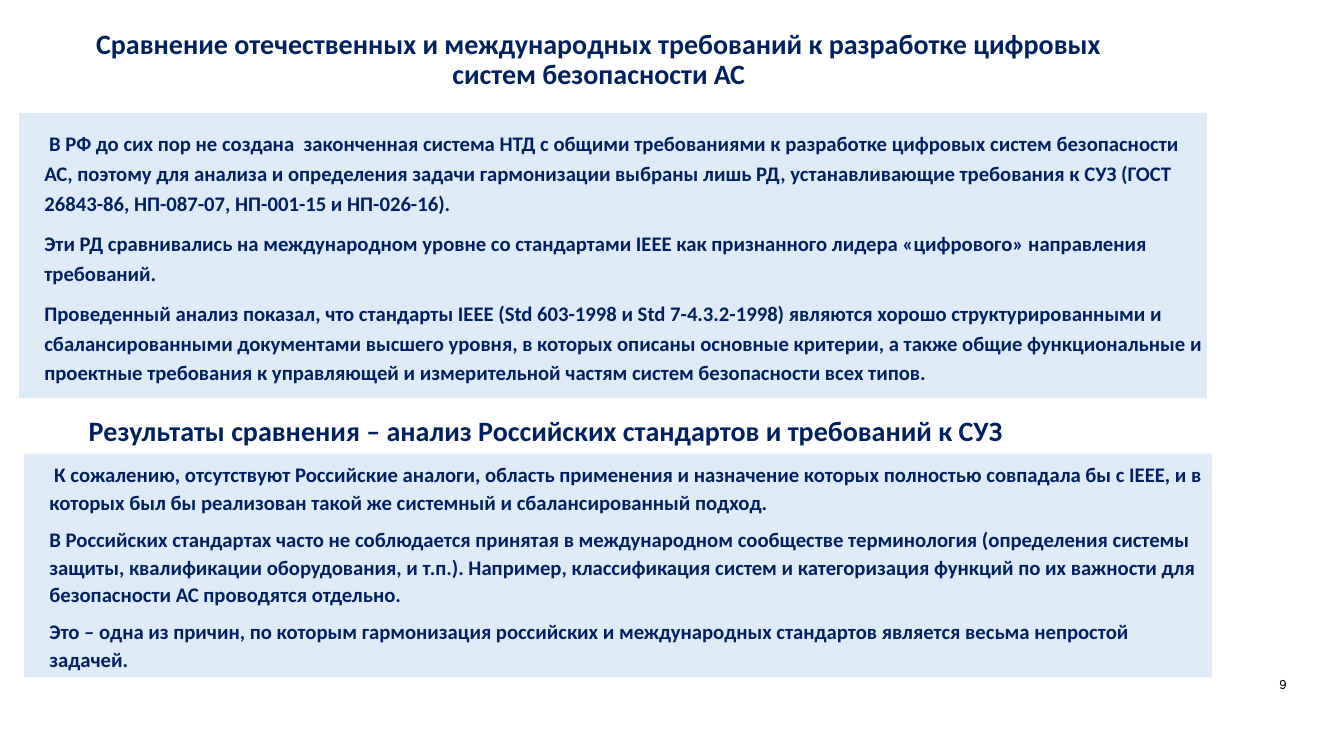
import dataclasses

import pptx
import pptx.dml.color
import pptx.enum.shapes
import pptx.enum.text
import pptx.util

ALIGN = pptx.enum.text.PP_ALIGN
ANCHOR = pptx.enum.text.MSO_ANCHOR
WIDTH, HEIGHT = 13.33, 7.5


@dataclasses.dataclass(frozen=True)
class Theme:
    ink: str = "002060"
    panel: str = "DEEBF7"
    number_ink: str = "000000"
    font: str = "Calibri"
    number_font: str = "Arial"
    heading_size: float = 20
    body_size: float = 14.8
    number_size: float = 9.3
    body_gap: float = 7.3
    body_indent: float = 0.25


THEME = Theme()

TITLE = "Сравнение отечественных и международных требований к разработке цифровых систем безопасности АС"
RESULTS_TITLE = "Результаты сравнения – анализ Российских стандартов и требований к СУЗ"
REQUIREMENTS = [
    " В РФ до сих пор не создана  законченная система НТД с общими требованиями к разработке "
    "цифровых систем безопасности АС, поэтому для анализа и определения задачи гармонизации "
    "выбраны лишь РД, устанавливающие требования к СУЗ "
    "(ГОСТ 26843-86, НП-087-07, НП-001-15 и НП-026-16).",
    "Эти РД сравнивались на международном уровне со стандартами IEEE как признанного лидера "
    "«цифрового» направления требований.",
    "Проведенный анализ показал, что стандарты IEEE (Std 603-1998 и Std 7-4.3.2-1998) являются "
    "хорошо структурированными и сбалансированными документами высшего уровня, в которых описаны "
    "основные критерии, а также общие функциональные и проектные требования к управляющей и "
    "измерительной частям систем безопасности всех типов.",
]
RESULTS = [
    " К сожалению, отсутствуют Российские аналоги, область применения и назначение которых "
    "полностью совпадала бы с IEEE, и в которых был бы реализован такой же системный и "
    "сбалансированный подход.",
    "В Российских стандартах часто не соблюдается принятая в международном сообществе "
    "терминология (определения системы защиты, квалификации оборудования, и т.п.). Например, "
    "классификация систем и категоризация функций по их важности для безопасности АС "
    "проводятся отдельно.",
    "Это – одна из причин, по которым гармонизация российских и международных стандартов "
    "является весьма непростой задачей.",
]


def color(value):
    return pptx.dml.color.RGBColor.from_string(value)


def apply(target, formats):
    for name, value in formats.items():
        setattr(target, name, value)


def place(area):
    return [pptx.util.Inches(length) for length in area]


def write(box, texts, font, ink, anchor=ANCHOR.TOP, **para_formats):
    """Fill a box with paragraphs that share one format."""
    frame = box.text_frame
    apply(frame, {"word_wrap": True, "vertical_anchor": anchor, "margin_left": 0,
                  "margin_top": 0, "margin_right": 0, "margin_bottom": 0})
    for index, text in enumerate(texts):
        para = frame.paragraphs[0] if index == 0 else frame.add_paragraph()
        apply(para, para_formats)
        if index == 0:
            para.space_before = pptx.util.Pt(0)
        span = para.add_run()
        span.text = text
        apply(span.font, font)
        span.font.color.rgb = color(ink)


def heading(page, area, text, alignment):
    box = page.shapes.add_textbox(*place(area))
    font = {"name": THEME.font, "size": pptx.util.Pt(THEME.heading_size), "bold": True}
    write(box, [text], font, THEME.ink, alignment=alignment, line_spacing=0.9)


def panel(page, area, texts, line_spacing):
    box = page.shapes.add_shape(pptx.enum.shapes.MSO_SHAPE.RECTANGLE, *place(area))
    box.shadow.inherit = False
    box.fill.solid()
    box.fill.fore_color.rgb = color(THEME.panel)
    box.line.fill.background()
    font = {"name": THEME.font, "size": pptx.util.Pt(THEME.body_size), "bold": True}
    write(box, texts, font, THEME.ink, ANCHOR.MIDDLE, alignment=ALIGN.LEFT,
          line_spacing=line_spacing, space_before=pptx.util.Pt(THEME.body_gap))
    for para in box.text_frame.paragraphs:
        para._p.get_or_add_pPr().set("marL", str(pptx.util.Inches(THEME.body_indent)))


def page_number(page, area, text):
    box = page.shapes.add_textbox(*place(area))
    font = {"name": THEME.number_font, "size": pptx.util.Pt(THEME.number_size)}
    write(box, [text], font, THEME.number_ink, ANCHOR.BOTTOM, alignment=ALIGN.RIGHT)


def comparison_slide(deck):
    page = deck.slides.add_slide(deck.slide_layouts[6])
    heading_width, panel_width = 0.78 * WIDTH, 11.78
    heading(page, (0.74, 0.3, heading_width, 0.63), TITLE, ALIGN.CENTER)
    panel(page, (0.19, 1.12, panel_width, 2.83), REQUIREMENTS, 1.2)
    heading(page, (0.88, 4.14, heading_width, 0.36), RESULTS_TITLE, ALIGN.LEFT)
    panel(page, (0.24, 4.5, panel_width, 2.22), RESULTS, 1.1)
    page_number(page, (11.94, 6.67, 0.82, 0.2), "9")


def main():
    deck = pptx.Presentation()
    apply(deck, {"slide_width": pptx.util.Inches(WIDTH),
                 "slide_height": pptx.util.Inches(HEIGHT)})
    comparison_slide(deck)
    deck.save("out.pptx")


if __name__ == "__main__":
    main()
